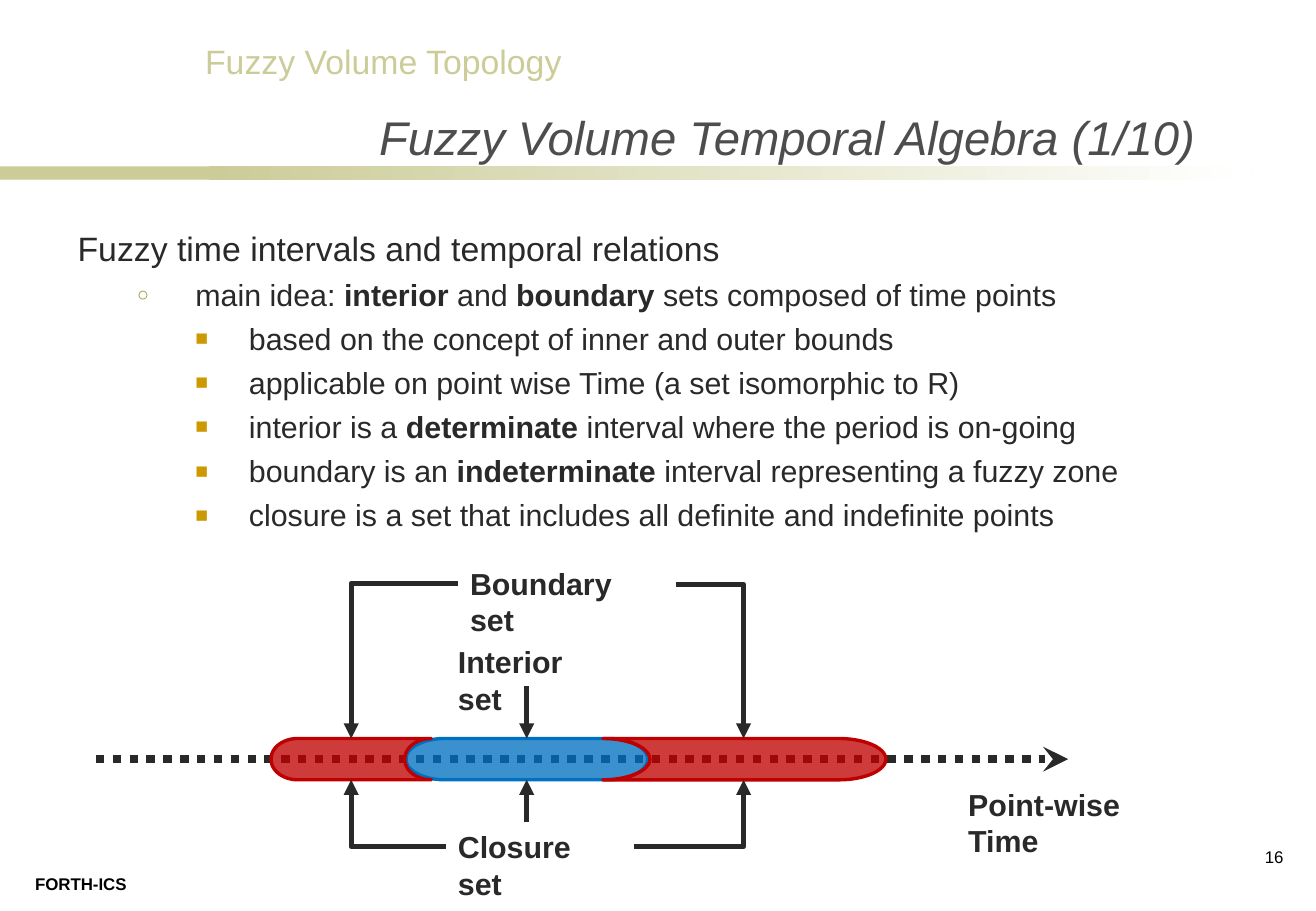
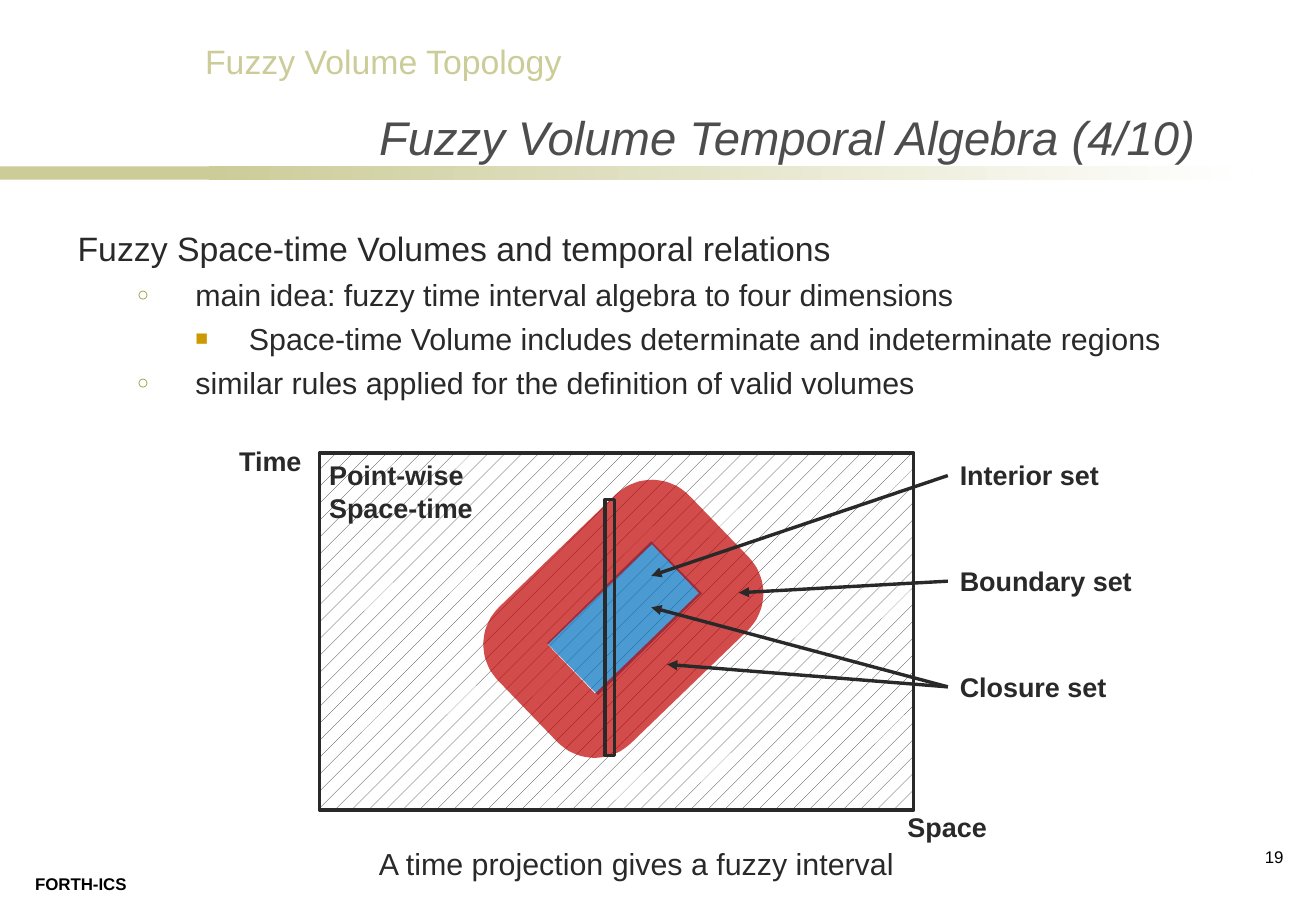
from lxml import etree
from pptx import Presentation
from pptx import util as u
from pptx.dml import color
from pptx.enum import dml, shapes, text
from pptx.oxml import ns

FONT = "Arial"
INK, BLACK, GREY, WHITE = "292929", "000000", "4D4D4D", "FFFFFF"
SAND, OLIVE, GOLD = "CCCC99", "999933", "CC9900"
RED, BLUE = "C00000", "0070C0"
LEVELS = [(0.49, 0.49, None, None, None),
          (0.97, 0.48, "○", OLIVE, 65000),
          (1.41, 0.44, "■", GOLD, 70000)]
KIND = shapes.MSO_SHAPE
LEFT, RIGHT = text.PP_ALIGN.LEFT, text.PP_ALIGN.RIGHT


def rgb(value):
    """Turn a hex string into a colour."""
    return color.RGBColor.from_string(value)


def sub(parent, tag, **attrs):
    """Append a drawing element with the given attributes."""
    el = etree.SubElement(parent, ns.qn("a:" + tag))
    for name, value in attrs.items():
        el.set(name, str(value))
    return el


def set_alpha(fill_owner, percent):
    """Make a solid colour partly transparent."""
    clr = next(fill_owner.iter(ns.qn("a:srgbClr")))
    sub(clr, "alpha", val=percent * 1000)


def font(r, size, ink, bold=False, italic=False):
    """Format one run."""
    f = r.font
    f.name, f.size, f.bold, f.italic = FONT, u.Pt(size), bold, italic
    f.color.rgb = rgb(ink)


def label(sl, box, words, size=18, ink=INK, bold=False, italic=False,
          align=LEFT, anchor=text.MSO_ANCHOR.TOP, wrap=False):
    """Add a text box with one style."""
    sp = sl.shapes.add_textbox(*map(u.Inches, box))
    tf = sp.text_frame
    tf.word_wrap, tf.vertical_anchor = wrap, anchor
    tf.text = words
    for p in tf.paragraphs:
        p.alignment = align
        for r in p.runs:
            font(r, size, ink, bold, italic)
    return sp


def shape(parent, kind, box, fill=None, line=None, width=2, alpha=None, rot=0):
    """Add a preset shape with optional fill, outline and rotation."""
    sp = parent.shapes.add_shape(kind, *map(u.Inches, box))
    sp.shadow.inherit = False
    sp.rotation = rot
    if fill:
        sp.fill.solid()
        sp.fill.fore_color.rgb = rgb(fill)
        if alpha:
            set_alpha(sp._element.spPr, alpha)
    else:
        sp.fill.background()
    if line:
        sp.line.color.rgb = rgb(line)
        sp.line.width = u.Pt(width)
    else:
        sp.line.fill.background()
    return sp


def arrow(sl, start, end, width=3, head="triangle", corner=False, dash=None):
    """Add an arrow, straight or with one corner after a horizontal leg."""
    kind = shapes.MSO_CONNECTOR.ELBOW if corner else shapes.MSO_CONNECTOR.STRAIGHT
    c = sl.shapes.add_connector(kind, *map(u.Inches, start + end))
    if corner:
        c._element.spPr.find(ns.qn("a:prstGeom")).set("prst", "bentConnector2")
    c.line.color.rgb = rgb(INK)
    c.line.width = u.Pt(width)
    if dash:
        c.line.dash_style = dash
    sub(c.line._get_or_add_ln(), "tailEnd", type=head)
    sub(c._element.spPr, "effectLst")
    return c


def frame(sl, title, number):
    """Add the header, title band, footer and page number."""
    shape(sl, KIND.RECTANGLE, (0, 1.37, 2.53, 0.11), SAND)
    band = shape(sl, KIND.RECTANGLE, (1.72, 1.37, 8.58, 0.11))
    band.fill.gradient()
    band.fill.gradient_angle = 0
    for stop, ink in zip(band.fill.gradient_stops, (SAND, WHITE)):
        stop.color.rgb = rgb(ink)
    label(sl, (1.59, 0.29, 3.16, 0.44), "Fuzzy Volume Topology", 20, SAND)
    label(sl, (0.19, 7.14, 0.97, 0.27), "FORTH-ICS", 10, BLACK, bold=True)
    label(sl, (2.11, 0.78, 7.82, 0.63), title, 28, GREY, italic=True,
          align=RIGHT, anchor=text.MSO_ANCHOR.BOTTOM, wrap=True)
    label(sl, (10.17, 6.92, 0.49, 0.42), str(number), 10, BLACK,
          align=RIGHT, wrap=True)


def outline(sl, box, items):
    """Add bulleted text from (level, words) pairs; asterisks enclose bold words."""
    tf = sl.shapes.add_textbox(*map(u.Inches, box)).text_frame
    tf.word_wrap = True
    for i, (level, words) in enumerate(items):
        p = tf.add_paragraph() if i else tf.paragraphs[0]
        margin, hang, char, ink, size = LEVELS[level]
        p.level = level
        pPr = p._p.get_or_add_pPr()
        pPr.set("marL", str(u.Inches(margin)))
        pPr.set("indent", str(-u.Inches(hang)))
        if char:
            sub(sub(pPr, "buClr"), "srgbClr", val=ink)
            sub(pPr, "buSzPct", val=size)
            sub(pPr, "buFont", typeface=FONT)
            sub(pPr, "buChar", char=char)
        if i:
            p.space_before = u.Pt(4.5)
        for k, part in enumerate(words.split("*")):
            r = p.add_run()
            r.text = part
            font(r, 18 if level else 20, INK, bold=k % 2 == 1)


def timeline(sl, x, y):
    """Draw the fuzzy interval on the time axis from its top left corner."""
    top, bottom = y + 1.48, y + 1.82
    left_mid, right_mid = x + 2.1, x + 5.33

    def name(dx, dy, width, words):
        """Add a bold label that wraps within its width."""
        return label(sl, (x + dx, y + dy, width, 0.4), words, bold=True, wrap=True)

    arrow(sl, (x, y + 1.65), (x + 8, y + 1.65), 5, "stealth",
          dash=dml.MSO_LINE.ROUND_DOT)
    name(7.08, 1.82, 1.84, "Point-wise Time")
    interior = shape(sl, KIND.FLOWCHART_TERMINATOR, (x + 2.55, top, 1.99, 0.34),
                     BLUE, BLUE, alpha=77)
    for dx, width, rot in ((1.44, 1.32, 0), (4.17, 2.33, 180)):
        shape(sl, KIND.FLOWCHART_STORED_DATA, (x + dx, top, width, 0.34),
              RED, RED, alpha=77, rot=rot)
    name(2.98, 0, 1.56, "Boundary set")
    inner = name(2.88, 0.65, 1.33, "Interior set")
    closure = name(2.88, 2.17, 1.33, "Closure set")
    for dx, dy, mid, edge in ((2.98, 0.2, left_mid, top), (4.77, 0.21, right_mid, top),
                              (2.88, 2.37, left_mid, bottom),
                              (4.43, 2.37, right_mid, bottom)):
        arrow(sl, (x + dx, y + dy), (mid, edge), corner=True)
    for box, side, facing, start, end in ((inner, 2, 0, y + 1.05, top),
                                          (closure, 0, 2, y + 2.17, bottom)):
        c = arrow(sl, (x + 3.54, start), (x + 3.54, end))
        c.begin_connect(box, side)
        c.end_connect(interior, facing)


def volume(sl, x, y):
    """Draw the fuzzy volume in space-time from its top left corner."""
    space = shape(sl, KIND.RECTANGLE, (x, y, 4.89, 2.94), line=INK)
    space.fill.patterned()
    space.fill.pattern = dml.MSO_PATTERN.PERCENT_5
    space.fill.fore_color.rgb = rgb(INK)
    space.fill.back_color.rgb = rgb(WHITE)

    def name(dx, dy, width, words, height=0.37):
        """Add a small bold label."""
        return label(sl, (x + dx, y + dy, width, height), words, 16, bold=True,
                     wrap=True)

    name(-0.02, 0, 1.48, "Point-wise\nSpace-time", 0.64)
    group = sl.shapes.add_group_shape()
    shape(group, KIND.RECTANGLE, (x + 2.21, y + 0.76, 0.6, 1.2), BLUE,
          alpha=70, rot=45.6)
    ring = shape(group, KIND.FLOWCHART_ALTERNATE_PROCESS,
                 (x + 1.97, y + 0.52, 1.06, 1.69), line=RED, width=36, rot=46)
    set_alpha(ring.line._get_or_add_ln(), 70)
    targets = (("Interior set", [(2.73, 1.01)]),
               ("Boundary set", [(3.45, 1.15)]),
               ("Closure set", [(2.73, 1.27), (2.86, 1.74)]))
    for i, (words, ends) in enumerate(targets):
        tag = name(5.17, 0.87 * i, 1.71, words)
        for dx, dy in ends:
            c = arrow(sl, (x + 5.17, y + 0.87 * i + 0.18), (x + dx, y + dy), 2)
            c.begin_connect(tag, 1)
    label(sl, (x + 0.39, y + 3.18, 4.48, 0.4),
          "A time projection gives a fuzzy interval")
    shape(sl, KIND.RECTANGLE, (x + 2.35, y + 0.38, 0.08, 2.11), line=INK)
    name(-0.76, -0.12, 0.73, "Time")
    name(4.74, 2.89, 0.87, "Space")


INTERVALS = [
    (0, "Fuzzy time intervals and temporal relations"),
    (1, "main idea: *interior* and *boundary* sets composed of time points"),
    (2, "based on the concept of inner and outer bounds"),
    (2, "applicable on point wise Time (a set isomorphic to R)"),
    (2, "interior is a *determinate* interval where the period is on-going"),
    (2, "boundary is an *indeterminate* interval representing a fuzzy zone"),
    (2, "closure is a set that includes all definite and indefinite points"),
]
VOLUMES = [
    (0, "Fuzzy Space-time Volumes and temporal relations"),
    (1, "main idea: fuzzy time interval algebra to four dimensions"),
    (2, "Space-time Volume includes determinate and indeterminate regions"),
    (1, "similar rules applied for the definition of valid volumes"),
]


def main():
    """Build and save the presentation."""
    prs = Presentation()
    prs.slide_width, prs.slide_height = u.Inches(10.83), u.Inches(7.5)
    pages = ((1, 16, INTERVALS, timeline, 0.79, 4.6),
             (4, 19, VOLUMES, volume, 2.63, 3.73))
    for part, number, items, diagram, x, y in pages:
        sl = prs.slides.add_slide(prs.slide_layouts[6])
        frame(sl, f"Fuzzy Volume Temporal Algebra ({part}/10)", number)
        outline(sl, (0.54, 1.83, 9.75, 4.83), items)
        diagram(sl, x, y)
    prs.save("out.pptx")


if __name__ == "__main__":
    main()
